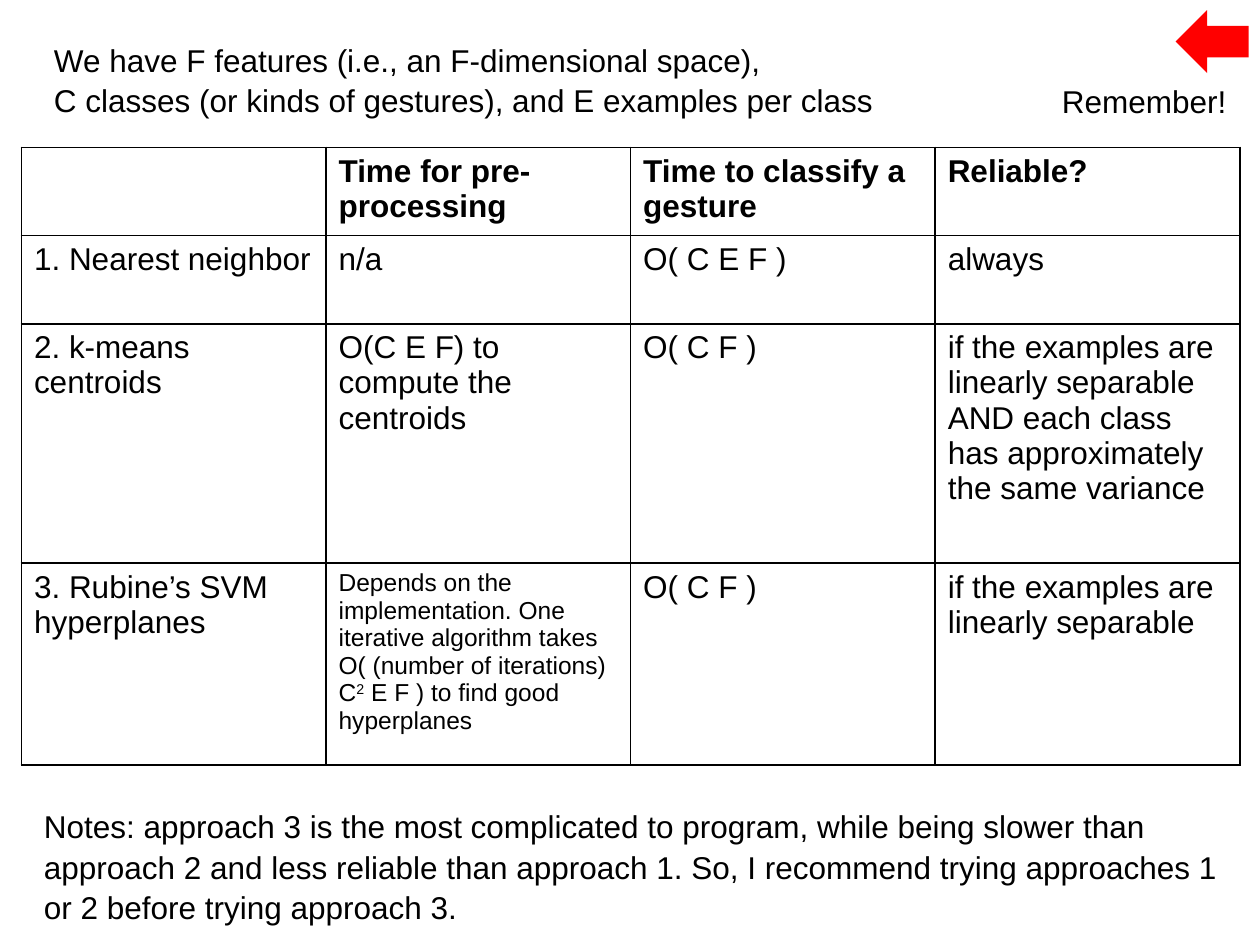
"""Build a slide comparing the cost and reliability of three gesture classifiers."""
from collections import namedtuple

from lxml import etree
from pptx import Presentation
from pptx.dml.color import RGBColor
from pptx.enum import shapes, text
from pptx.oxml import ns
from pptx.util import Inches, Pt

Theme = namedtuple("Theme", "font ink accent body small border leading")
theme = Theme("Arial", RGBColor(0, 0, 0), RGBColor(255, 0, 0), Pt(18), Pt(14), Pt(1), 1.08)


def style_runs(frame, size=theme.body, bold=False):
    for para in frame.paragraphs:
        for span in para.runs:
            span.font.name = theme.font
            span.font.size = size
            span.font.bold = bold
            span.font.color.rgb = theme.ink


def outline_cell(cell):
    properties = cell._tc.get_or_add_tcPr()
    for side in ("a:lnL", "a:lnR", "a:lnT", "a:lnB"):
        line = etree.SubElement(properties, ns.qn(side), w=str(theme.border))
        fill = etree.SubElement(line, ns.qn("a:solidFill"))
        etree.SubElement(fill, ns.qn("a:srgbClr"), val=str(theme.ink))


deck = Presentation()
deck.slide_width, deck.slide_height = Inches(10), Inches(7.5)
page = deck.slides.add_slide(deck.slide_layouts[6])

rows = [
    ["", "Time for pre-processing", "Time to classify a gesture", "Reliable?"],
    ["1. Nearest neighbor", "n/a", "O( C E F )", "always"],
    ["2. k-means centroids", "O(C E F) to compute the centroids", "O( C F )",
     "if the examples are linearly separable AND each class has approximately the same variance"],
    ["3. Rubine’s SVM hyperplanes", "Depends on the implementation. One iterative algorithm takes",
     "O( C F )", "if the examples are linearly separable"],
]
row_heights = [0.7, 0.7, 1.9, 1.6]
table = page.shapes.add_table(len(rows), len(rows[0]), Inches(0.17), Inches(1.17),
                              Inches(9.67), Inches(sum(row_heights))).table
table.first_row = table.horz_banding = False
for row, height in zip(table.rows, row_heights):
    row.height = Inches(height)
for row_index, labels in enumerate(rows):
    for column_index, label in enumerate(labels):
        cell = table.cell(row_index, column_index)
        outline_cell(cell)
        cell.fill.background()
        cell.text_frame.text = label
        style_runs(cell.text_frame, bold=row_index == 0)

svm_cost = table.cell(3, 1).text_frame
para = svm_cost.paragraphs[0]
para.add_line_break()
for piece in ("O( (number of iterations) C", "2", " E F ) to find good hyperplanes"):
    span = para.add_run()
    span.text = piece
    if piece == "2":
        span._r.get_or_add_rPr().set("baseline", "30000")
style_runs(svm_cost, theme.small)

captions = [
    ("We have F features (i.e., an F-dimensional space),\n"
     "C classes (or kinds of gestures), and E examples per class", 0.33, 0.25, 9.25, 0.71),
    ("Notes: approach 3 is the most complicated to program, while being slower than "
     "approach 2 and less reliable than approach 1. So, I recommend trying approaches 1 "
     "or 2 before trying approach 3.", 0.25, 6.33, 9.67, 1.01),
    ("Remember!", 8.33, 0.58, 1.67, 0.4),
]
for caption, *place in captions:
    box = page.shapes.add_textbox(*map(Inches, place))
    frame = box.text_frame
    frame.word_wrap = True
    frame.auto_size = text.MSO_AUTO_SIZE.SHAPE_TO_FIT_TEXT
    frame.text = caption
    style_runs(frame)
    for para in frame.paragraphs:
        para.line_spacing = theme.leading

arrow = page.shapes.add_shape(shapes.MSO_SHAPE.RIGHT_ARROW, Inches(9.33), Inches(0.08),
                              Inches(0.58), Inches(0.5))
arrow.rotation = 180
arrow.shadow.inherit = False
arrow.fill.solid()
arrow.fill.fore_color.rgb = theme.accent
arrow.line.fill.background()

deck.save("out.pptx")
